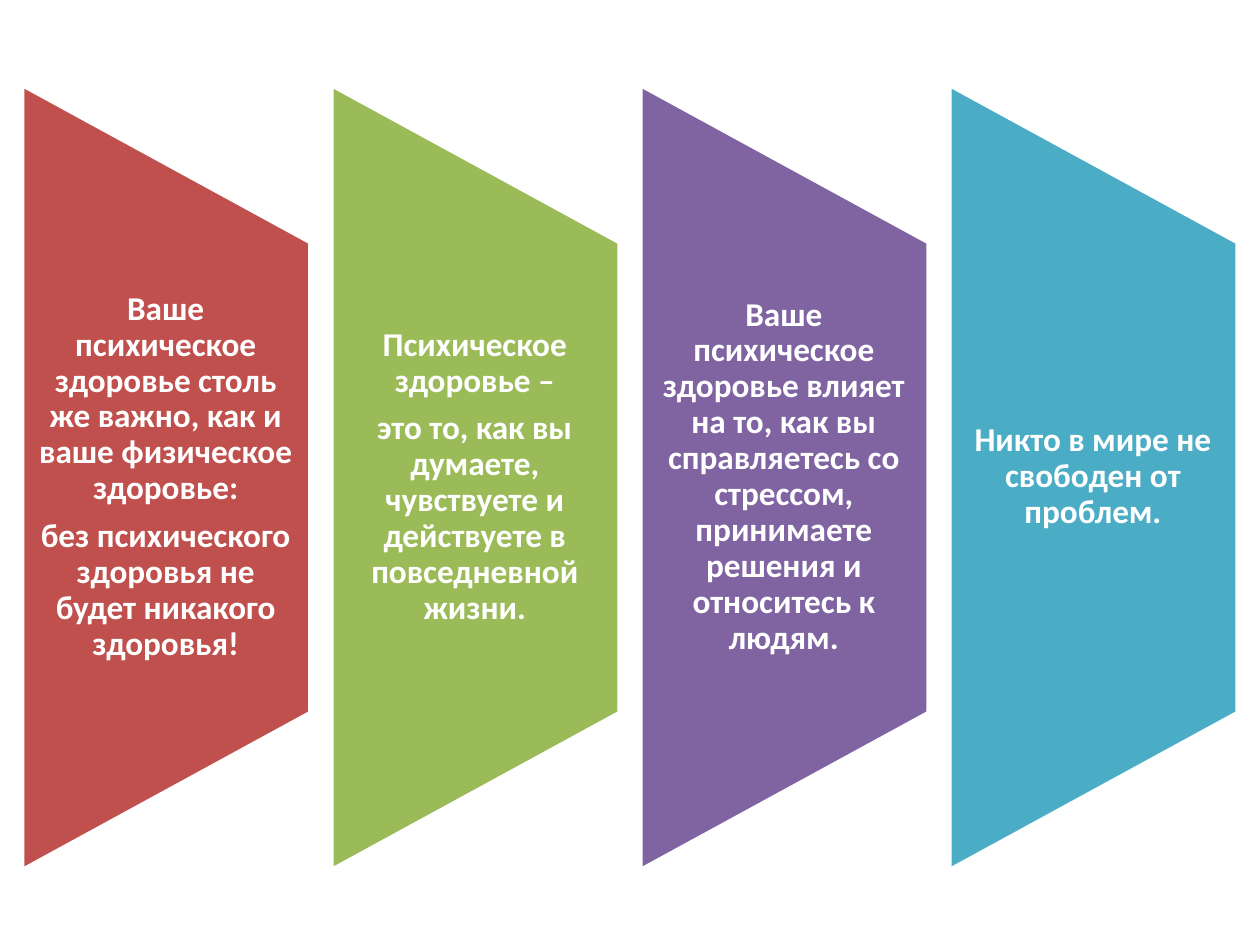
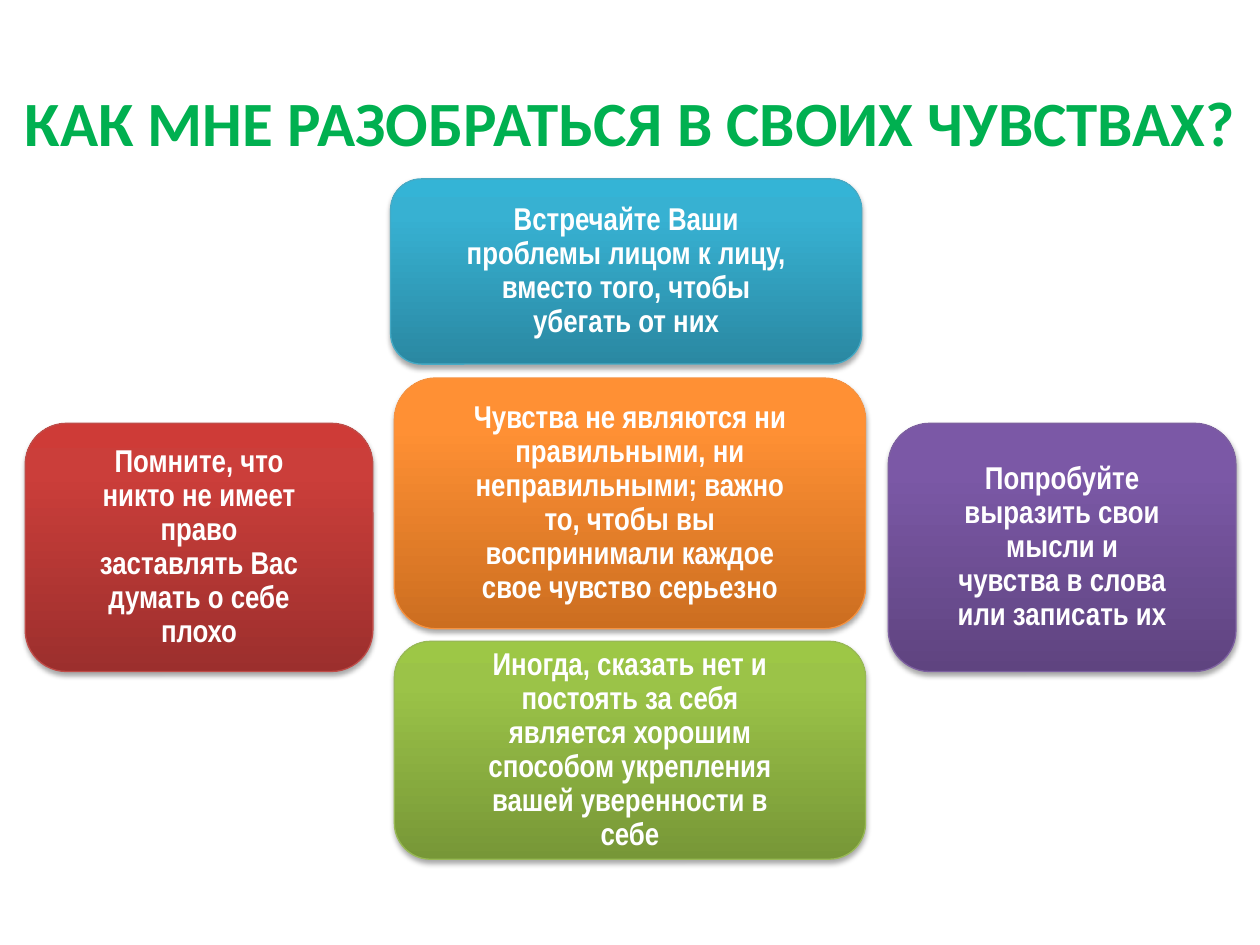
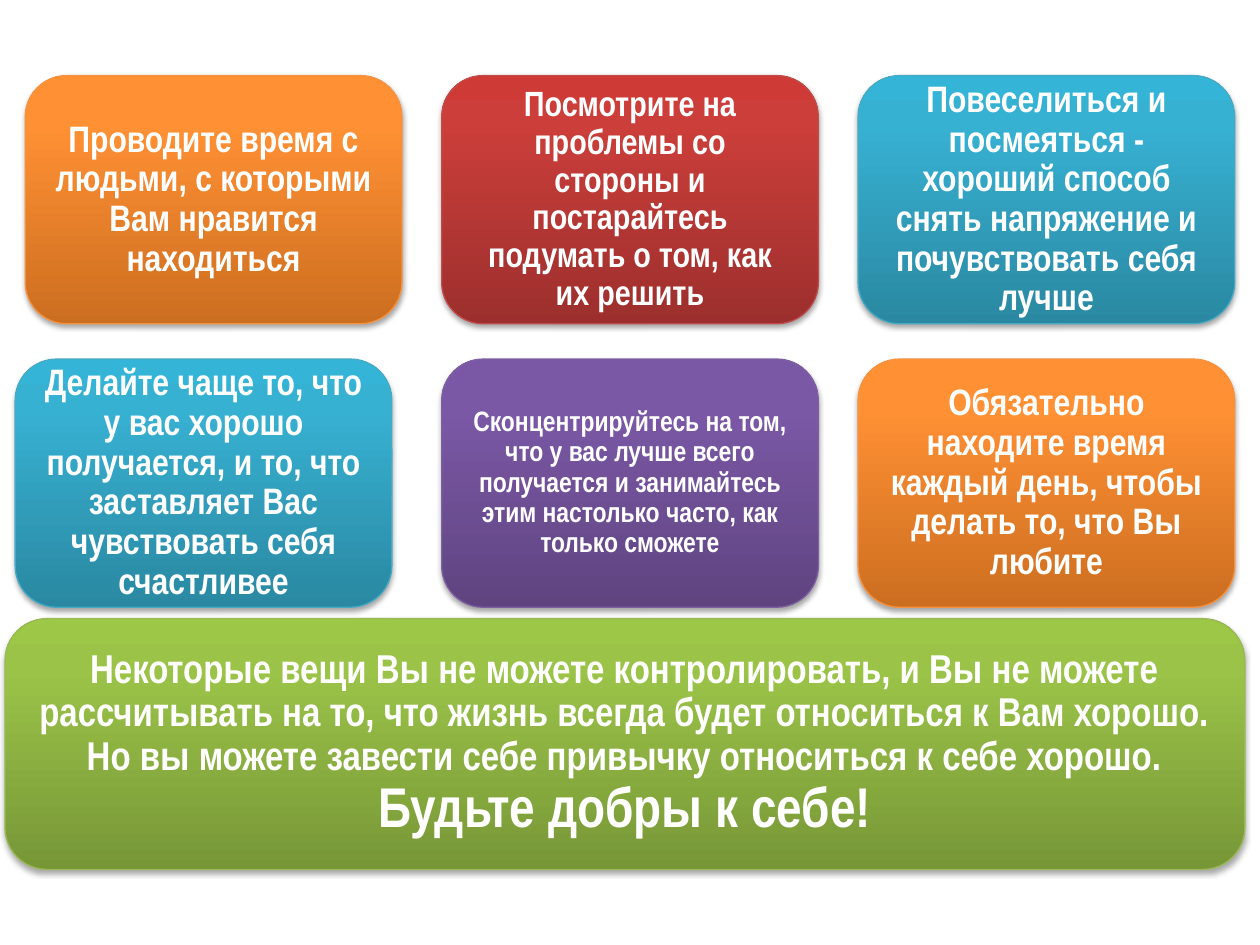
from pptx import Presentation
from pptx.dml.color import RGBColor
from pptx.enum.shapes import MSO_SHAPE
from pptx.enum.text import MSO_ANCHOR, PP_ALIGN
from pptx.oxml import parse_xml
from pptx.oxml.ns import nsdecls, qn
from pptx.util import Inches, Pt

ROUND = MSO_SHAPE.ROUNDED_RECTANGLE
FLAG = MSO_SHAPE.FLOWCHART_MANUAL_OPERATION
MIDDLE = MSO_ANCHOR.MIDDLE
CENTER = PP_ALIGN.CENTER

COLORS = {"white": "FFFFFF", "title": "00B050"}
# Gradient stops from bottom to top, then the outline
TONES = {
    "orange": ("CC6E20", "FF9034", "FF9136", "F69240"),
    "blue": ("2A88A2", "37B1D2", "34B4D6", "46AAC5"),
    "violet": ("5F4480", "7B58A6", "7C57A8", "7D60A0"),
    "green": ("779737", "9BC348", "9DC746", "98B955"),
    "red": ("9C2F2D", "CB3E3A", "CE3B37", "BF4C48"),
}
STOPS = (0, 80, 100)
WIDE, NARROW = "Calibri", "Arial Narrow"

FLAGS = [
    ("C0504D", ["Ваше психическое здоровье столь же важно, как и ваше физическое здоровье:",
                "без психического здоровья не будет никакого здоровья!"]),
    ("9BBB59", ["Психическое здоровье –",
                "это то, как вы думаете, чувствуете и действуете в повседневной жизни."]),
    ("8064A2", ["Ваше психическое здоровье влияет на то, как вы справляетесь со стрессом, "
                "принимаете решения и относитесь к людям."]),
    ("4BACC6", ["Никто в мире не свободен от проблем."]),
]

TITLE = "КАК МНЕ РАЗОБРАТЬСЯ В СВОИХ ЧУВСТВАХ?"
ADVICE = [
    ("orange", (3.13, 3, 3.74, 1.99),
     "Чувства не являются ни правильными, ни неправильными; важно то, чтобы вы "
     "воспринимали каждое свое чувство серьезно"),
    ("blue", (3.1, 1.42, 3.74, 1.47),
     "Встречайте Ваши проблемы лицом к лицу, вместо того, чтобы убегать от них"),
    ("violet", (7.05, 3.36, 2.76, 1.97),
     "Попробуйте выразить свои мысли и чувства в слова или записать их"),
    ("green", (3.13, 5.09, 3.74, 1.73),
     "Иногда, сказать нет и постоять за себя является хорошим способом укрепления "
     "вашей уверенности в себе"),
    ("red", (0.2, 3.36, 2.76, 1.97),
     "Помните, что никто не имеет право заставлять Вас думать о себе плохо"),
]

# Tone, text size, shift from the grid, text; three to a row
HABITS = [
    ("orange", 21, 0, "Проводите время с людьми, с которыми Вам нравится находиться"),
    ("red", 20, 0, "Посмотрите на проблемы со стороны и постарайтесь подумать о том, как их решить"),
    ("blue", 21, 0, "Повеселиться и посмеяться - хороший способ снять напряжение и "
                    "почувствовать себя лучше"),
    ("blue", 21, -0.08, "Делайте чаще то, что у вас хорошо получается, и то, что заставляет Вас "
                        "чувствовать себя счастливее"),
    ("violet", 16, 0, "Сконцентрируйтесь на том, что у вас лучше всего получается и занимайтесь "
                      "этим настолько часто, как только сможете"),
    ("orange", 21, 0, "Обязательно находите время каждый день, чтобы делать то, что Вы любите"),
]
CLOSING = [
    ("Некоторые вещи Вы не можете контролировать, и Вы не можете рассчитывать на то, что "
     "жизнь всегда будет относиться к Вам хорошо. Но вы можете завести себе привычку "
     "относиться к себе хорошо.", 23),
    ("Будьте добры к себе!", 32),
]


def rgb(code):
    return RGBColor.from_string(code)


def write(shape, lines, font, pads, color="white", lead=0.9, gap=0):
    """Fill a shape with centred bold lines, each a (text, size) pair."""
    frame = shape.text_frame
    sides = ("margin_left", "margin_top", "margin_right", "margin_bottom")
    form = {"word_wrap": True, "vertical_anchor": MIDDLE,
            **{side: Inches(pad) for side, pad in zip(sides, pads)}}
    for name, value in form.items():
        setattr(frame, name, value)
    for i, (text, size) in enumerate(lines):
        para = frame.add_paragraph() if i else frame.paragraphs[0]
        para.alignment, para.line_spacing = CENTER, lead
        if i and gap:
            para.space_before = Pt(gap)
        run = para.add_run()
        run.text = text
        for name, value in {"name": font, "size": Pt(size), "bold": True}.items():
            setattr(run.font, name, value)
        run.font.color.rgb = rgb(COLORS[color])


def add_box(slide, at):
    return slide.shapes.add_textbox(*map(Inches, at))


def add_shape(slide, kind, at, line, width):
    shape = slide.shapes.add_shape(kind, *map(Inches, at))
    shape.shadow.inherit = False
    shape.line.color.rgb = rgb(line)
    shape.line.width = Pt(width)
    return shape


def add_card(slide, tone, at, lines, pads):
    """Add a rounded card with a vertical gradient and a soft shadow."""
    *shades, edge = TONES[tone]
    card = add_shape(slide, ROUND, at, edge, 0.75)
    stops = "".join(f'<a:gs pos="{pos * 1000}"><a:srgbClr val="{shade}"/></a:gs>'
                    for pos, shade in zip(STOPS, shades))
    props = card._element.spPr
    props.find(qn("a:ln")).addprevious(parse_xml(
        f'<a:gradFill {nsdecls("a")} rotWithShape="1"><a:gsLst>{stops}</a:gsLst>'
        '<a:lin ang="16200000" scaled="0"/></a:gradFill>'))
    props.find(qn("a:effectLst")).append(parse_xml(
        f'<a:outerShdw {nsdecls("a")} blurRad="{Pt(3.1)}" dist="{Pt(1.8)}" dir="5400000" '
        'rotWithShape="0"><a:srgbClr val="000000"><a:alpha val="35000"/></a:srgbClr>'
        '</a:outerShdw>'))
    write(card, lines, NARROW, pads)


def flag_slide(slide):
    long, wide, step, left, mid = 6.22, 2.28, 2.453, 0.18, 3.79
    for i, (fill, texts) in enumerate(FLAGS):
        x = left + i * step
        flag = add_shape(slide, FLAG, (x + (wide - long) / 2, mid - wide / 2, long, wide),
                         COLORS["white"], 2)
        flag.rotation = 270
        flag.fill.solid()
        flag.fill.fore_color.rgb = rgb(fill)
        box = add_box(slide, (x, 1.92, wide, 3.73))
        write(box, [(text, 19) for text in texts], WIDE, (0.13, 0, 0.14, 0), gap=6.65)


def advice_slide(slide):
    write(add_box(slide, (0, 0.61, 10, 0.71)), [(TITLE, 36)], WIDE,
          (0.1, 0.05, 0.1, 0.05), "title", 1.0)
    for tone, at, text in ADVICE:
        add_card(slide, tone, at, [(text, 18)], (0.45, 0.29) * 2)


def habit_slide(slide):
    pads = (0.12,) * 4
    for i, (tone, size, shift, text) in enumerate(HABITS):
        row, col = divmod(i, 3)
        at = (0.2 + col * 3.305 + shift, 0.6 + row * 2.25, 2.99, 1.97)
        add_card(slide, tone, at, [(text, size)], pads)
    add_card(slide, "green", (0.04, 4.91, 9.84, 1.99), CLOSING, pads)


def main():
    deck = Presentation()
    deck.slide_width, deck.slide_height = Inches(10), Inches(7.5)
    for build in (flag_slide, advice_slide, habit_slide):
        build(deck.slides.add_slide(deck.slide_layouts[6]))
    deck.save("out.pptx")


if __name__ == "__main__":
    main()
